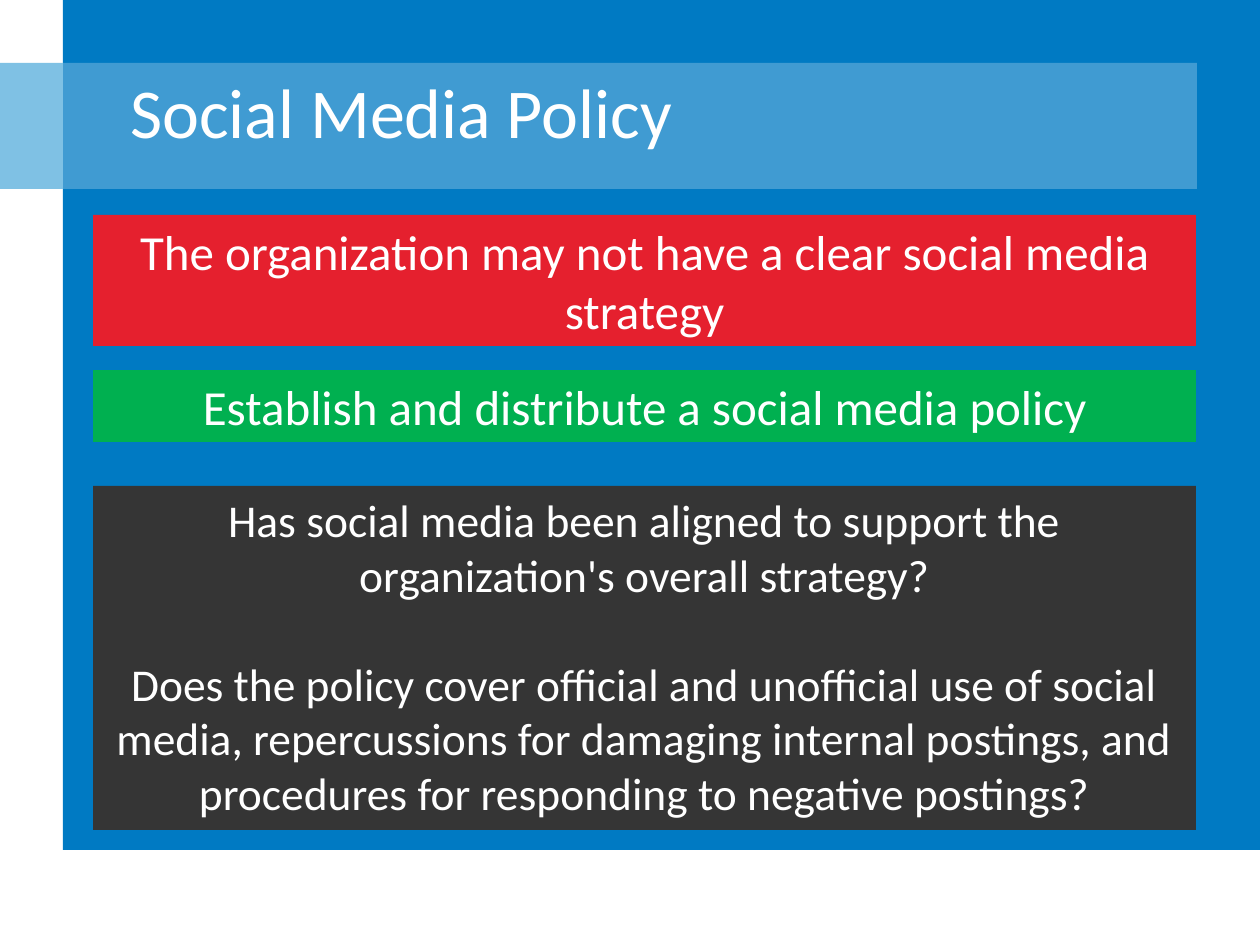
from pptx import Presentation
from pptx.dml.color import RGBColor
from pptx.enum.shapes import MSO_SHAPE as Shape
from pptx.enum.text import MSO_ANCHOR as Anchor, PP_ALIGN as Align
from pptx.util import Emu, Pt

PX_PER_INCH = 126
FONT = "Calibri"
WHITE = RGBColor(0xFF, 0xFF, 0xFF)
BLUE = RGBColor(0x00, 0x7A, 0xC3)
MID_BLUE = RGBColor(0x40, 0x9B, 0xD2)
PALE_BLUE = RGBColor(0x7F, 0xC1, 0xE4)
RED = RGBColor(0xE5, 0x20, 0x2E)
GREEN = RGBColor(0x00, 0xB0, 0x50)
CHARCOAL = RGBColor(0x35, 0x35, 0x35)


def px(n):
    return Emu(round(n * 914400 / PX_PER_INCH))


def add_rect(s, box, color):
    sp = s.shapes.add_shape(Shape.RECTANGLE, *map(px, box))
    sp.shadow.inherit = False
    sp.fill.solid()
    sp.fill.fore_color.rgb = color
    sp.line.fill.background()
    return sp


def write(tf, paragraphs, size, align, anchor, gap=0):
    tf.word_wrap = True
    tf.vertical_anchor = anchor
    for i, text in enumerate(paragraphs):
        p = tf.add_paragraph() if i else tf.paragraphs[0]
        p.text = text
        p.alignment = align
        if i:
            p.space_before = Pt(gap)
        p.font.name = FONT
        p.font.size = Pt(size)
        p.font.color.rgb = WHITE


def add_backdrop(s, box):
    add_rect(s, box, BLUE)


def add_title_band(s, box, tab_width, title):
    left, top, width, height = box
    # Band with a paler tab at its left end
    add_rect(s, (left + tab_width, top, width - tab_width, height), MID_BLUE)
    add_rect(s, (left, top, tab_width, height), PALE_BLUE)
    # Title
    tb = s.shapes.add_textbox(px(left + 118), px(top - 31), px(1052), px(height + 31))
    write(tb.text_frame, [title], 40, Align.LEFT, Anchor.MIDDLE)


def add_panels(s, box, panels):
    left, top, width = box
    for offset, height, color, size, paragraphs in panels:
        sp = add_rect(s, (left, top + offset, width, height), color)
        write(sp.text_frame, paragraphs, size, Align.CENTER, Anchor.TOP, gap=31)


def main():
    prs = Presentation()
    prs.slide_width, prs.slide_height = px(1260), px(945)
    s = prs.slides.add_slide(prs.slide_layouts[6])

    add_backdrop(s, (63, 0, 1197, 850))
    add_title_band(s, (0, 63, 1197, 126), 63, "Social Media Policy")

    # Risk, response and audit questions: offset, height, colour, size, text
    add_panels(s, (93, 215, 1103), [
        (0, 131, RED, 28,
         ["The organization may not have a clear social media strategy"]),
        (155, 72, GREEN, 28,
         ["Establish and distribute a social media policy"]),
        (271, 344, CHARCOAL, 26,
         ["Has social media been aligned to support the organization's overall strategy?",
          "Does the policy cover official and unofficial use of social media, "
          "repercussions for damaging internal postings, and procedures for "
          "responding to negative postings?"]),
    ])
    prs.save("out.pptx")


if __name__ == "__main__":
    main()
